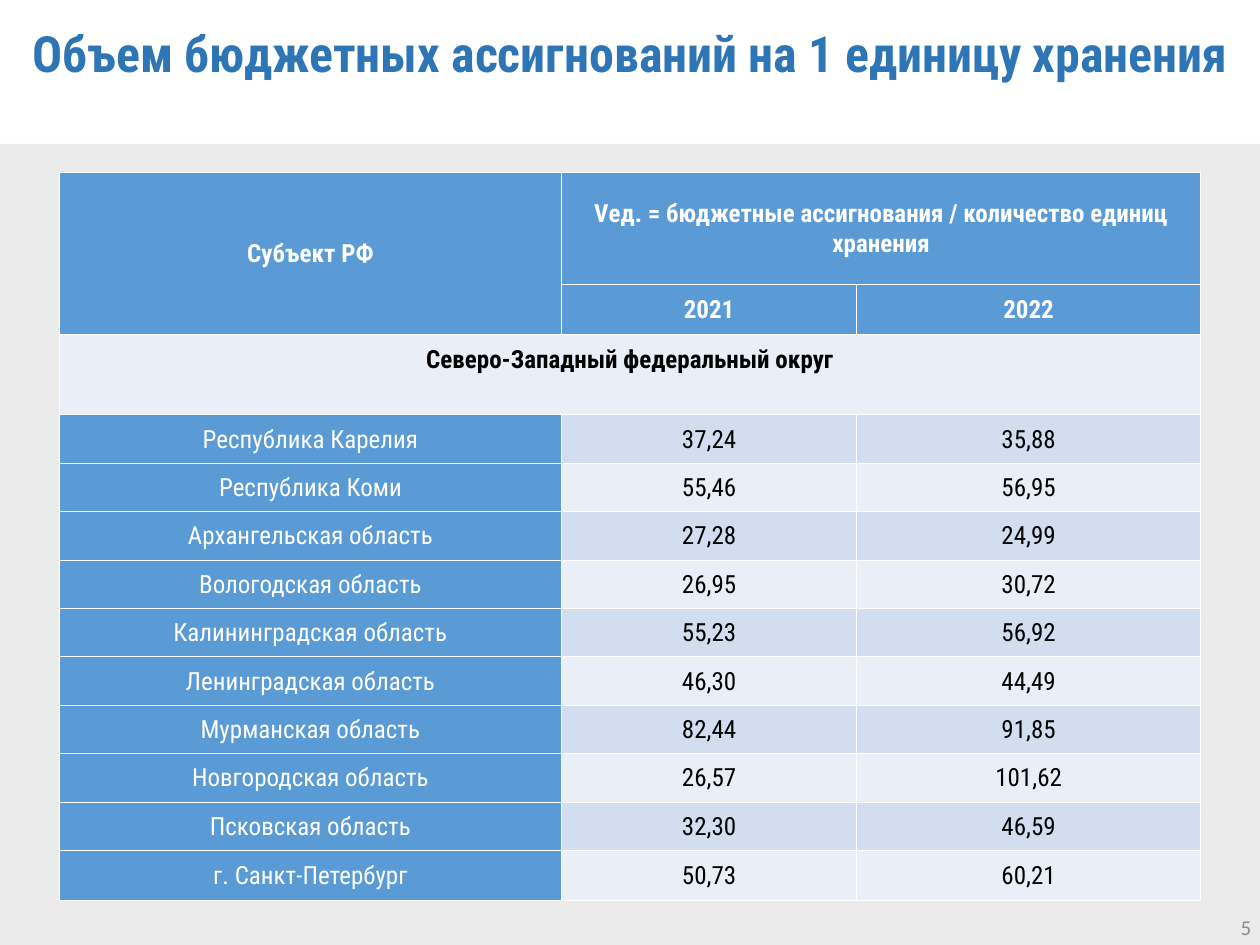
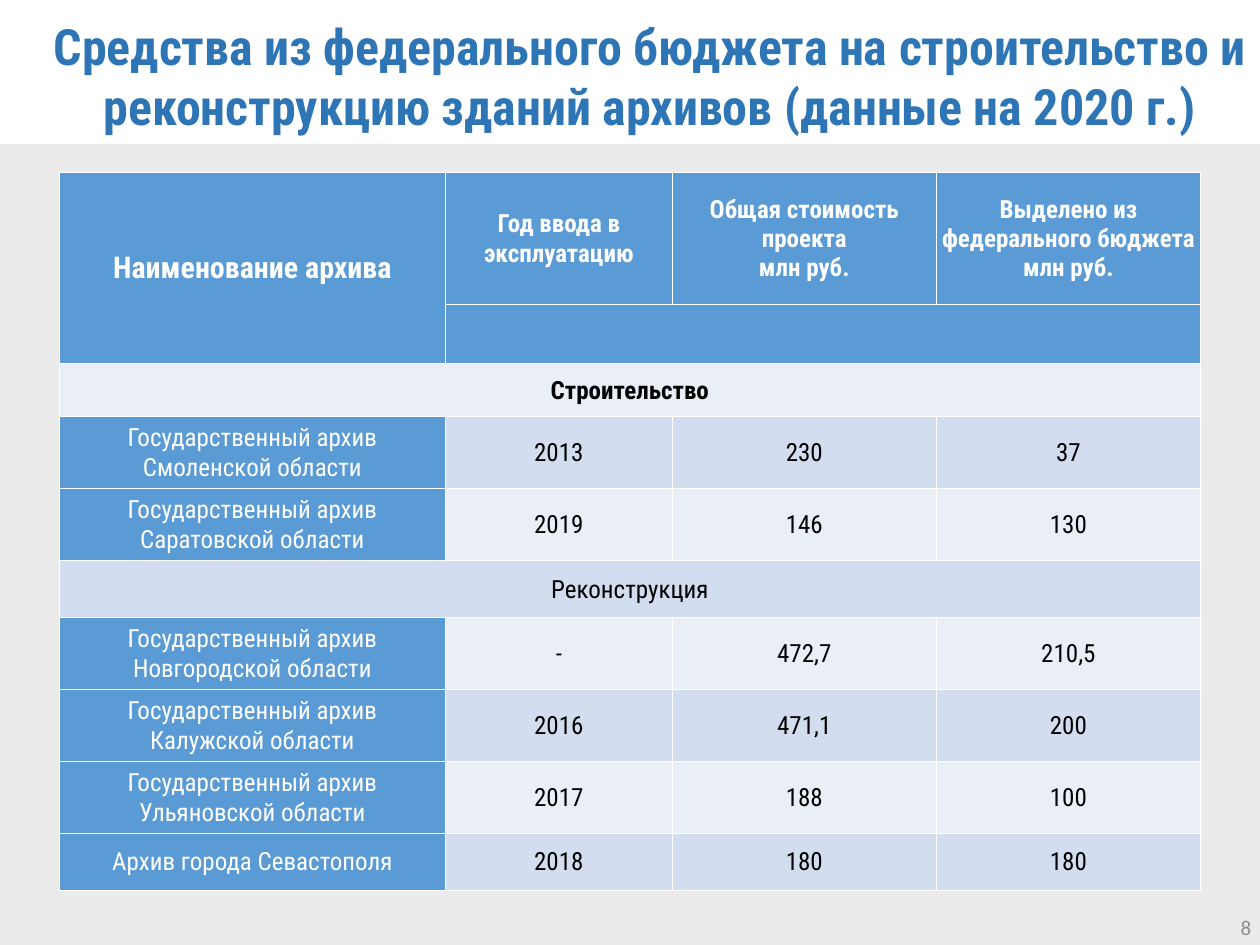
from lxml.etree import SubElement
from pptx import Presentation
from pptx.dml.color import RGBColor
from pptx.enum.shapes import MSO_SHAPE
from pptx.enum.text import MSO_ANCHOR, MSO_AUTO_SIZE, PP_ALIGN
from pptx.oxml.ns import qn
from pptx.util import Inches, Pt

# Palette and fonts
TITLE_BLUE = RGBColor(0x2E, 0x75, 0xB6)
HEADER_BLUE = RGBColor(0x5B, 0x9B, 0xD5)
DARK_STRIPE = RGBColor(0xD2, 0xDE, 0xEF)
LIGHT_STRIPE = RGBColor(0xEA, 0xEF, 0xF7)
BAND_GREY = RGBColor(0xEB, 0xEB, 0xEB)
NUMBER_GREY = RGBColor(0x8C, 0x8C, 0x8C)
WHITE = RGBColor(0xFF, 0xFF, 0xFF)
BLACK = RGBColor(0, 0, 0)
TEXT_FONT = "Roboto Condensed"
NUMBER_FONT = "Calibri"

# Grid shared by all slides
COLUMNS, ROWS = 140, 105
HEADER_ROWS = 2
TITLE_ONLY = 5


class Deck:
    """Holds the style and the slide being built."""

    def __init__(self):
        self.presentation = Presentation()
        self.presentation.slide_width = Inches(14)
        self.presentation.slide_height = Inches(10.5)
        self.slide = None

    def across(self, columns):
        return round(self.presentation.slide_width * columns / COLUMNS)

    def down(self, rows):
        return round(self.presentation.slide_height * rows / ROWS)

    def box(self, left, top, width, height):
        return self.across(left), self.down(top), self.across(width), self.down(height)

    def set_text(self, frame, text, size, color, bold=False,
                 align=PP_ALIGN.CENTER, font=TEXT_FONT):
        frame.text = text
        for paragraph in frame.paragraphs:
            paragraph.alignment = align
            paragraph.font.name = font
            paragraph.font.size = Pt(size)
            paragraph.font.bold = bold
            paragraph.font.color.rgb = color

    def start(self, title, place, number):
        layout = self.presentation.slide_layouts[TITLE_ONLY]
        self.slide = self.presentation.slides.add_slide(layout)
        self.title(title, place)
        self.band()
        self.number(number)

    def title(self, text, place):
        heading = self.slide.shapes.title
        heading.left, heading.top, heading.width, heading.height = self.box(*place)
        frame = heading.text_frame
        frame.word_wrap = True
        frame.auto_size = MSO_AUTO_SIZE.NONE
        frame.vertical_anchor = MSO_ANCHOR.MIDDLE
        self.set_text(frame, text, 40, TITLE_BLUE, bold=True)

    def band(self):
        backdrop = self.slide.shapes.add_shape(
            MSO_SHAPE.RECTANGLE, *self.box(0, 16, COLUMNS, ROWS - 16))
        backdrop.shadow.inherit = False
        backdrop.fill.solid()
        backdrop.fill.fore_color.rgb = BAND_GREY
        backdrop.line.fill.background()

    def number(self, value):
        corner = self.slide.shapes.add_textbox(*self.box(108.5, 101, 31.5, 4))
        frame = corner.text_frame
        frame.word_wrap = True
        frame.vertical_anchor = MSO_ANCHOR.MIDDLE
        self.set_text(frame, str(value), 16.8, NUMBER_GREY,
                      align=PP_ALIGN.RIGHT, font=NUMBER_FONT)

    def table(self, widths, heights, content, header_spans, corner_size=20):
        """A one-item row below the header is a section that spans the table."""
        place = self.box(6.6, 19.2, sum(widths), sum(heights))
        table = self.slide.shapes.add_table(len(heights), len(widths), *place).table
        table.first_row = table.horz_banding = False
        for column, width in zip(table.columns, widths):
            column.width = self.across(width)
        for row, height in zip(table.rows, heights):
            row.height = self.down(height)

        last = len(widths) - 1
        for r, texts in enumerate(content):
            padded = texts + ("",) * (len(widths) - len(texts))
            is_section = r >= HEADER_ROWS and len(texts) == 1
            for c, text in enumerate(padded):
                is_blue = r < HEADER_ROWS or (c == 0 and not is_section)
                stripe = DARK_STRIPE if r % 2 else LIGHT_STRIPE
                self.cell(table.cell(r, c), text,
                          fill=HEADER_BLUE if is_blue else stripe,
                          color=WHITE if is_blue else BLACK,
                          bold=r <= HEADER_ROWS,
                          size=corner_size if r == c == 0 else 20)
            if is_section:
                table.cell(r, 0).merge(table.cell(r, last))
        for first, end in header_spans:
            table.cell(*first).merge(table.cell(*end))
        return table

    def cell(self, cell, text, fill, color, bold, size):
        cell.margin_left = cell.margin_right = cell.margin_top = Inches(0.01)
        cell.margin_bottom = 0
        cell.vertical_anchor = MSO_ANCHOR.MIDDLE
        self.set_text(cell.text_frame, text, size, color, bold)
        # Borders have to come before the fill
        properties = cell._tc.get_or_add_tcPr()
        for side in ("a:lnL", "a:lnR", "a:lnT", "a:lnB"):
            border = SubElement(properties, qn(side), w=str(Pt(1)))
            paint = SubElement(border, qn("a:solidFill"))
            SubElement(paint, qn("a:srgbClr"), val=str(WHITE))
        cell.fill.solid()
        cell.fill.fore_color.rgb = fill


def storage_funding(deck):
    deck.start("Объем бюджетных ассигнований на 1 единицу хранения",
               (0, 2, COLUMNS, 7.7), 5)
    regions = [
        ("Республика Карелия", "37,24", "35,88"),
        ("Республика Коми", "55,46", "56,95"),
        ("Архангельская область", "27,28", "24,99"),
        ("Вологодская область", "26,95", "30,72"),
        ("Калининградская область", "55,23", "56,92"),
        ("Ленинградская область", "46,30", "44,49"),
        ("Мурманская область", "82,44", "91,85"),
        ("Новгородская область", "26,57", "101,62"),
        ("Псковская область", "32,30", "46,59"),
        ("г. Санкт-Петербург", "50,73", "60,21"),
    ]
    content = [
        ("Субъект РФ", "Vед. = бюджетные ассигнования / количество единиц хранения"),
        ("", "2021", "2022"),
        ("Северо-Западный федеральный округ",),
    ] + regions
    funding = deck.table(
        widths=[55.8, 32.8, 38.2],
        heights=[12.4, 5.6, 8.9] + [5.38] * (len(regions) - 1) + [5.6],
        content=content,
        header_spans=[((0, 0), (1, 0)), ((0, 1), (0, 2))])
    # The district name sits high in its row
    funding.cell(HEADER_ROWS, 0).margin_bottom = deck.down(3.3)


def archive_buildings(deck):
    deck.start("Средства из федерального бюджета на строительство и "
               "реконструкцию зданий архивов (данные на 2020 г.)",
               (2.2, 1.8, COLUMNS, 13.2), 8)
    content = [
        ("Наименование архива", "Год ввода в эксплуатацию",
         "Общая стоимость проекта\nмлн руб.",
         "Выделено из федерального бюджета\nмлн руб."),
        (),
        ("Строительство",),
        ("Государственный архив\nСмоленской области", "2013", "230", "37"),
        ("Государственный архив\nСаратовской области", "2019", "146", "130"),
        ("Реконструкция",),
        ("Государственный архив Новгородской области", "-", "472,7", "210,5"),
        ("Государственный архив\nКалужской области", "2016", "471,1", "200"),
        ("Государственный архив Ульяновской области", "2017", "188", "100"),
        ("Архив города Севастополя", "2018", "180", "180"),
    ]
    deck.table(
        widths=[42.9, 25.2, 29.35, 29.35],
        heights=[14.6, 6.6, 5.9, 8, 8, 6.3, 8, 8, 8, 6.3],
        content=content,
        header_spans=[((0, 0), (1, 0)), ((1, 1), (1, 3))],
        corner_size=24)


def main():
    deck = Deck()
    storage_funding(deck)
    archive_buildings(deck)
    deck.presentation.save("out.pptx")


if __name__ == "__main__":
    main()
